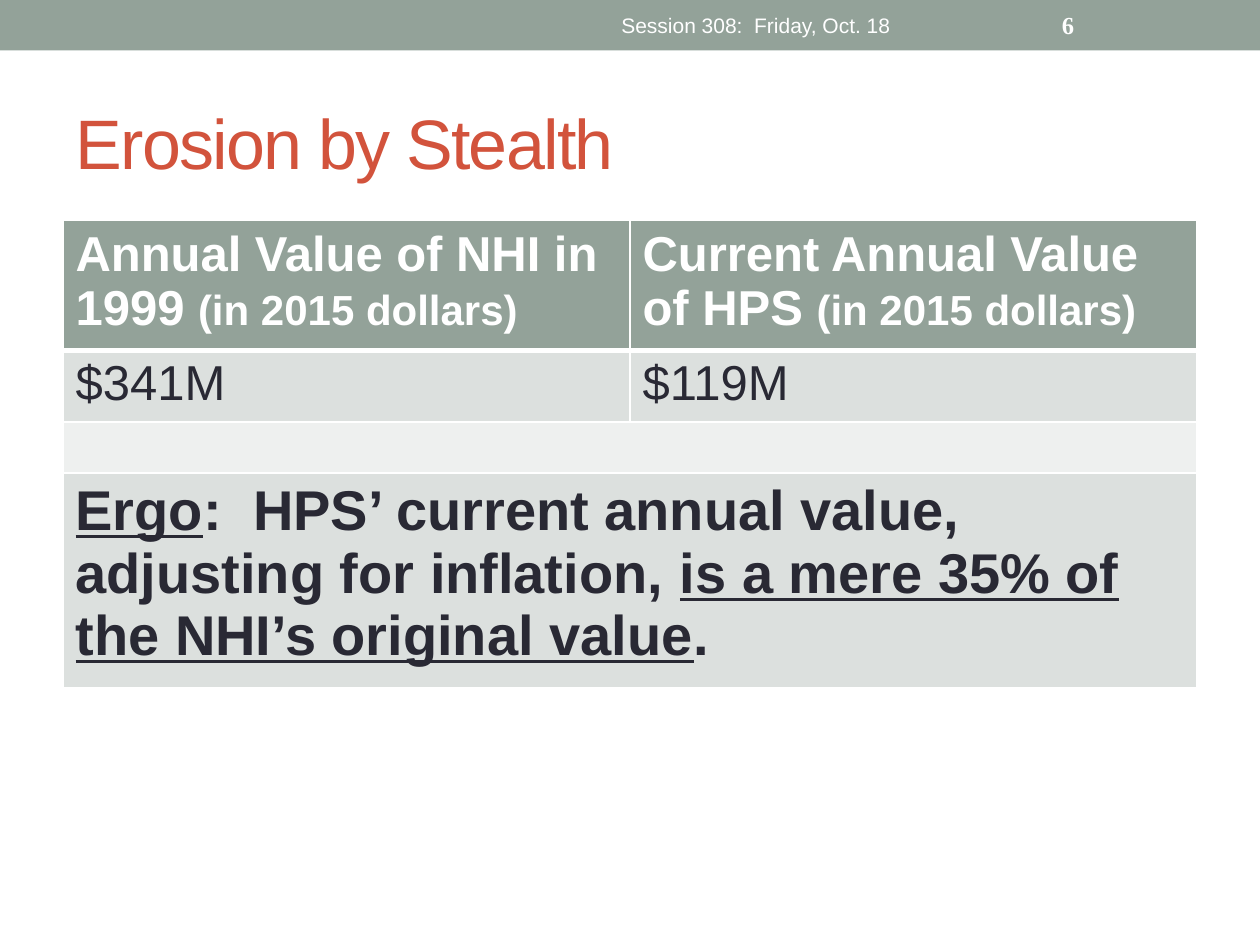
from dataclasses import dataclass

from lxml.etree import SubElement
from pptx import Presentation
from pptx.dml.color import RGBColor
from pptx.enum.shapes import MSO_SHAPE
from pptx.enum.text import MSO_ANCHOR, MSO_AUTO_SIZE, PP_ALIGN
from pptx.oxml.ns import qn
from pptx.util import Inches, Pt


@dataclass(frozen=True)
class Theme:
    font: str = "Arial"
    number_font: str = "Times New Roman"
    accent: str = "93A299"
    title: str = "D2533C"
    ink: str = "292934"
    white: str = "FFFFFF"
    band: str = "DCE0DE"
    pale_band: str = "EEF0EF"
    title_size: int = 40
    ergo_size: int = 32
    cell_size: int = 28
    note_size: int = 24
    footer_size: int = 12
    number_size: int = 14


THEME = Theme()


@dataclass(frozen=True)
class Run:
    text: str
    size: int
    color: str = THEME.ink
    bold: bool = False
    underline: bool = False
    font: str = THEME.font


@dataclass(frozen=True)
class Row:
    height: float
    fill: str
    cells: list[list[Run]]
    top_line: int = 1
    bottom_line: int = 1


def write_runs(tf, runs: list[Run], align=PP_ALIGN.LEFT) -> None:
    p = tf.paragraphs[0]
    p.alignment = align
    for run in runs:
        r = p.add_run()
        r.text = run.text
        r.font.name = run.font
        r.font.size = Pt(run.size)
        r.font.bold = run.bold
        r.font.underline = run.underline
        r.font.color.rgb = RGBColor.from_string(run.color)


def add_label(slide, left: float, width: float, run: Run, align) -> None:
    tf = slide.shapes.add_textbox(Inches(left), Inches(0.02), Inches(width), Inches(0.36)).text_frame
    tf.word_wrap = True
    tf.vertical_anchor = MSO_ANCHOR.MIDDLE
    write_runs(tf, [run], align)


def add_borders(cell, top: int, bottom: int) -> None:
    """Draw white cell borders; must run before the cell gets its fill."""
    tc_pr = cell._tc.get_or_add_tcPr()
    for side, width in (("L", 1), ("R", 1), ("T", top), ("B", bottom)):
        ln = SubElement(tc_pr, qn(f"a:ln{side}"), w=str(Pt(width)))
        fill = SubElement(ln, qn("a:solidFill"))
        SubElement(fill, qn("a:srgbClr"), val=THEME.white)


def add_value_table(slide, rows: list[Row], columns: int) -> None:
    """Fill the table; a row with fewer cells than columns is merged across."""
    height = sum(row.height for row in rows)
    table = slide.shapes.add_table(
        len(rows), columns, Inches(0.5), Inches(1.75), Inches(9), Inches(height)).table
    for i, row in enumerate(rows):
        table.rows[i].height = Inches(row.height)
        for j in range(columns):
            cell = table.cell(i, j)
            add_borders(cell, row.top_line, row.bottom_line)
            cell.fill.solid()
            cell.fill.fore_color.rgb = RGBColor.from_string(row.fill)
        if len(row.cells) < columns:
            table.cell(i, 0).merge(table.cell(i, columns - 1))
        for j, runs in enumerate(row.cells):
            write_runs(table.cell(i, j).text_frame, runs)


def header(text: str) -> list[Run]:
    return [Run(text, THEME.cell_size, THEME.white, bold=True),
            Run("(in 2015 dollars)", THEME.note_size, THEME.white, bold=True)]


def ergo(text: str, underline: bool = False) -> Run:
    return Run(text, THEME.ergo_size, bold=True, underline=underline)


ROWS = [
    Row(1.03, THEME.accent,
        [header("Annual Value of NHI in 1999 "), header("Current Annual Value of HPS ")],
        bottom_line=3),
    Row(0.57, THEME.band,
        [[Run(value, THEME.cell_size)] for value in ("$341M", "$119M")], top_line=3),
    Row(0.4, THEME.pale_band, []),
    Row(1.7, THEME.band, [[
        ergo("Ergo", True),
        ergo(":  HPS’ current annual value, adjusting for inflation, "),
        ergo("is a mere 35% of the NHI’s original value", True),
        ergo("."),
    ]]),
]


def main() -> None:
    prs = Presentation()
    prs.slide_width, prs.slide_height = Inches(10), Inches(7.5)
    slide = prs.slides.add_slide(prs.slide_layouts[5])

    title = slide.shapes.title
    title.left, title.top, title.width, title.height = map(Inches, (0.5, 0.58, 9, 1.08))
    tf = title.text_frame
    tf.auto_size = MSO_AUTO_SIZE.NONE
    tf.vertical_anchor = MSO_ANCHOR.MIDDLE
    write_runs(tf, [Run("Erosion by Stealth", THEME.title_size, THEME.title)])
    tf.paragraphs[0].runs[0].font._element.set("spc", "-100")

    bar = slide.shapes.add_shape(MSO_SHAPE.RECTANGLE, 0, 0, prs.slide_width, Inches(0.4))
    bar.shadow.inherit = False
    bar.fill.solid()
    bar.fill.fore_color.rgb = RGBColor.from_string(THEME.accent)
    bar.line.fill.background()

    add_value_table(slide, ROWS, columns=2)
    add_label(slide, 3.75, 4.5,
              Run("Session 308:  Friday, Oct. 18", THEME.footer_size, THEME.white),
              PP_ALIGN.CENTER)
    add_label(slide, 8.33, 1.17,
              Run("6", THEME.number_size, THEME.white, bold=True, font=THEME.number_font),
              PP_ALIGN.LEFT)
    prs.save("out.pptx")


if __name__ == "__main__":
    main()
